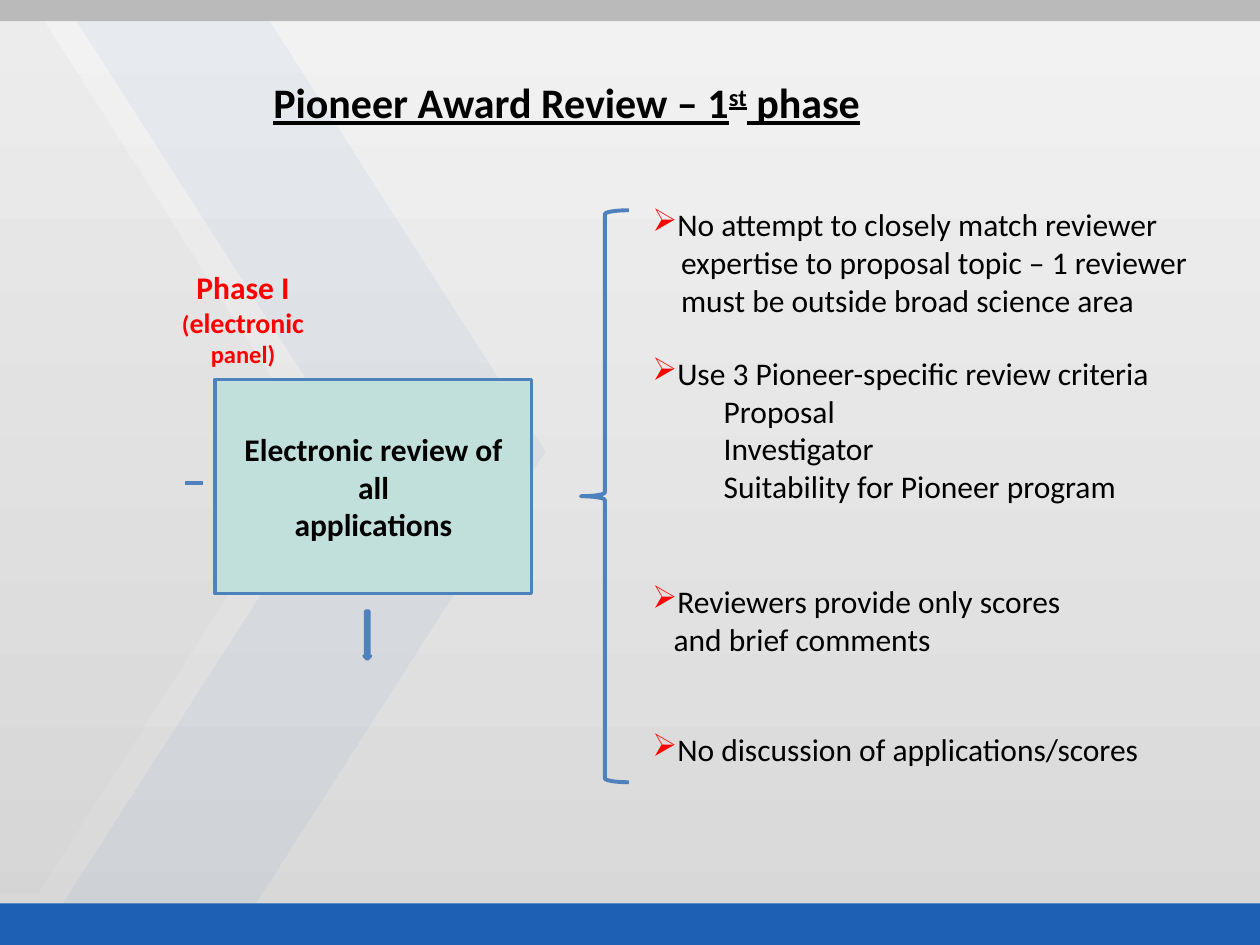
from dataclasses import dataclass
from typing import Any

from lxml import etree
from pptx import Presentation
from pptx import util as u
from pptx.dml.color import RGBColor
from pptx.enum import shapes, text
from pptx.oxml.ns import qn

BLACK = RGBColor(0, 0, 0)
RED = RGBColor(0xFF, 0, 0)
BLUE = RGBColor(0x4F, 0x81, 0xBD)
ROYAL = RGBColor(0x1C, 0x61, 0xB4)
MINT = RGBColor(0xC2, 0xE0, 0xDB)
SILVER = RGBColor(0xBF, 0xBF, 0xBF)
GREY = RGBColor(0xBA, 0xBA, 0xBA)
DARK = RGBColor(0xD8, 0xD8, 0xD8)
LIGHT = RGBColor(0xF2, 0xF2, 0xF2)

WIDE, HIGH = 25.4, 19.05
NOTE_LEFT = 12.9
KIND = shapes.MSO_SHAPE
CENTER = text.PP_ALIGN.CENTER


@dataclass
class Area:
    """A place on the slide, in centimetres."""
    left: float
    top: float
    width: float
    height: float

    def box(self) -> list[u.Cm]:
        return [u.Cm(n) for n in (self.left, self.top, self.width, self.height)]


@dataclass
class Form:
    kind: Any
    area: Area
    fill: RGBColor | None = None
    line: float = 0
    adjust: tuple[float, ...] = ()
    alpha: int = 100


@dataclass
class Note:
    """A bulleted line with further lines indented below it."""
    top: float
    width: float
    height: float
    indent: float
    lines: list[str]


BACK = [
    Form(KIND.RECTANGLE, Area(0, HIGH - 0.84, WIDE, 0.84), ROYAL),
    Form(KIND.CHEVRON, Area(1.27, 0, 9.73, 18.21), ROYAL, adjust=(0.6,), alpha=5),
    Form(KIND.PENTAGON, Area(0, 0.23, 6.43, 17.78), SILVER, adjust=(0.88,), alpha=10),
    Form(KIND.RECTANGLE, Area(0, 0, WIDE, 0.43), GREY),
]
REVIEW = Form(KIND.RECTANGLE, Area(4.34, 7.65, 6.38, 4.32), MINT, 2)
ARROW = Form(KIND.DOWN_ARROW, Area(7.34, 12.32, 0.13, 0.97), BLUE, 2)
BRACE = Form(KIND.LEFT_BRACE, Area(11.71, 4.24, 0.97, 11.53), None, 2.25, (0.08, 0.5))

NOTES = [
    Note(4.01, 11.43, 4.11, 0.58, ["No attempt to closely match reviewer",
                                   "expertise to proposal topic – 1 reviewer",
                                   "must be outside broad science area"]),
    Note(7.01, 10.67, 3.33, 1.44, ["Use 3 Pioneer-specific review criteria",
                                   "Proposal", "Investigator",
                                   "Suitability for Pioneer program"]),
    Note(11.61, 8.84, 1.8, 0.43, ["Reviewers provide only scores",
                                  "and brief comments"]),
    Note(14.6, 10.41, 1.02, 0, ["No discussion of applications/scores"]),
]


def draw(slide: Any, form: Form) -> Any:
    shape = slide.shapes.add_shape(form.kind, *form.area.box())
    shape.shadow.inherit = False
    for spot, value in enumerate(form.adjust):
        shape.adjustments[spot] = value
    if form.fill is None:
        shape.fill.background()
    else:
        shape.fill.solid()
        shape.fill.fore_color.rgb = form.fill
    if form.alpha < 100:
        color = shape.fill._xPr.find(".//" + qn("a:srgbClr"))
        etree.SubElement(color, qn("a:alpha")).set("val", str(form.alpha * 1000))
    if form.line:
        shape.line.color.rgb = BLUE
        shape.line.width = u.Pt(form.line)
    else:
        shape.line.fill.background()
    return shape


def shade(slide: Any) -> None:
    """Cover the slide with a gradient, light at the top."""
    fill = draw(slide, Form(KIND.RECTANGLE, Area(0, 0, WIDE, HIGH), LIGHT)).fill
    fill.gradient()
    fill.gradient_angle = 90
    for stop, color, spot in zip(fill.gradient_stops, (DARK, LIGHT), (0, 1)):
        stop.color.rgb = color
        stop.position = spot


def add_run(para: Any, words: str, size: float = 18,
            color: RGBColor = BLACK, **style: Any) -> Any:
    run = para.add_run()
    run.text = words
    run.font.color.rgb = color
    look = {"name": "Calibri", "size": u.Pt(size), **style}
    for key, value in look.items():
        setattr(run.font, key, value)
    return run


def add_para(frame: Any, first: bool, align: Any = None) -> Any:
    para = frame.paragraphs[0] if first else frame.add_paragraph()
    para.alignment = align
    return para


def add_text(slide: Any, area: Area, wrap: bool = False) -> Any:
    frame = slide.shapes.add_textbox(*area.box()).text_frame
    frame.word_wrap = wrap
    frame.auto_size = text.MSO_AUTO_SIZE.SHAPE_TO_FIT_TEXT
    return frame


def add_bullet(para: Any) -> None:
    props = para._p.get_or_add_pPr()
    color = etree.SubElement(props, qn("a:buClr"))
    etree.SubElement(color, qn("a:srgbClr")).set("val", str(RED))
    etree.SubElement(props, qn("a:buChar")).set("char", "➢")


def add_note(slide: Any, note: Note) -> None:
    area = Area(NOTE_LEFT, note.top, note.width, note.height)
    frame = add_text(slide, area)
    for row, line in enumerate(note.lines):
        para = add_para(frame, row == 0)
        if row == 0:
            add_bullet(para)
        else:
            para._p.get_or_add_pPr().set("marL", str(u.Cm(note.indent)))
        add_run(para, line)


def add_review(slide: Any) -> None:
    frame = draw(slide, REVIEW).text_frame
    frame.word_wrap = True
    frame.vertical_anchor = text.MSO_ANCHOR.MIDDLE
    for row, line in enumerate(("Electronic review of all", "applications")):
        add_run(add_para(frame, row == 0, CENTER), line, bold=True)


def add_phase(slide: Any) -> None:
    frame = add_text(slide, Area(2.74, 5.28, 4.32, 2.31), wrap=True)
    rows = [[("Phase I", 18)], [("(", 14), ("electronic", 16)], [("panel)", 14)]]
    for row, parts in enumerate(rows):
        para = add_para(frame, row == 0, CENTER)
        for words, size in parts:
            add_run(para, words, size, RED, bold=True)


def add_dash(slide: Any) -> None:
    ends = [u.Cm(n) for n in (3.73, 9.73, 4.09, 9.73)]
    dash = slide.shapes.add_connector(shapes.MSO_CONNECTOR.STRAIGHT, *ends)
    dash.line.color.rgb = BLUE
    dash.line.width = u.Pt(2.25)
    etree.SubElement(dash._element.spPr, qn("a:effectLst"))


def add_title(slide: Any) -> None:
    para = add_text(slide, Area(5.26, 1.42, 12.5, 1.27)).paragraphs[0]
    for words in ("Pioneer Award Review – 1", "st", " phase"):
        run = add_run(para, words, 24, bold=True, underline=True)
        if words == "st":
            run.font._element.set("baseline", "30000")


def main() -> None:
    deck = Presentation()
    deck.slide_width, deck.slide_height = u.Cm(WIDE), u.Cm(HIGH)
    slide = deck.slides.add_slide(deck.slide_layouts[6])
    shade(slide)
    for form in BACK:
        draw(slide, form)
    add_review(slide)
    add_phase(slide)
    add_dash(slide)
    for note in NOTES:
        add_note(slide, note)
    for form in (ARROW, BRACE):
        draw(slide, form)
    add_title(slide)
    deck.save("out.pptx")


if __name__ == "__main__":
    main()
